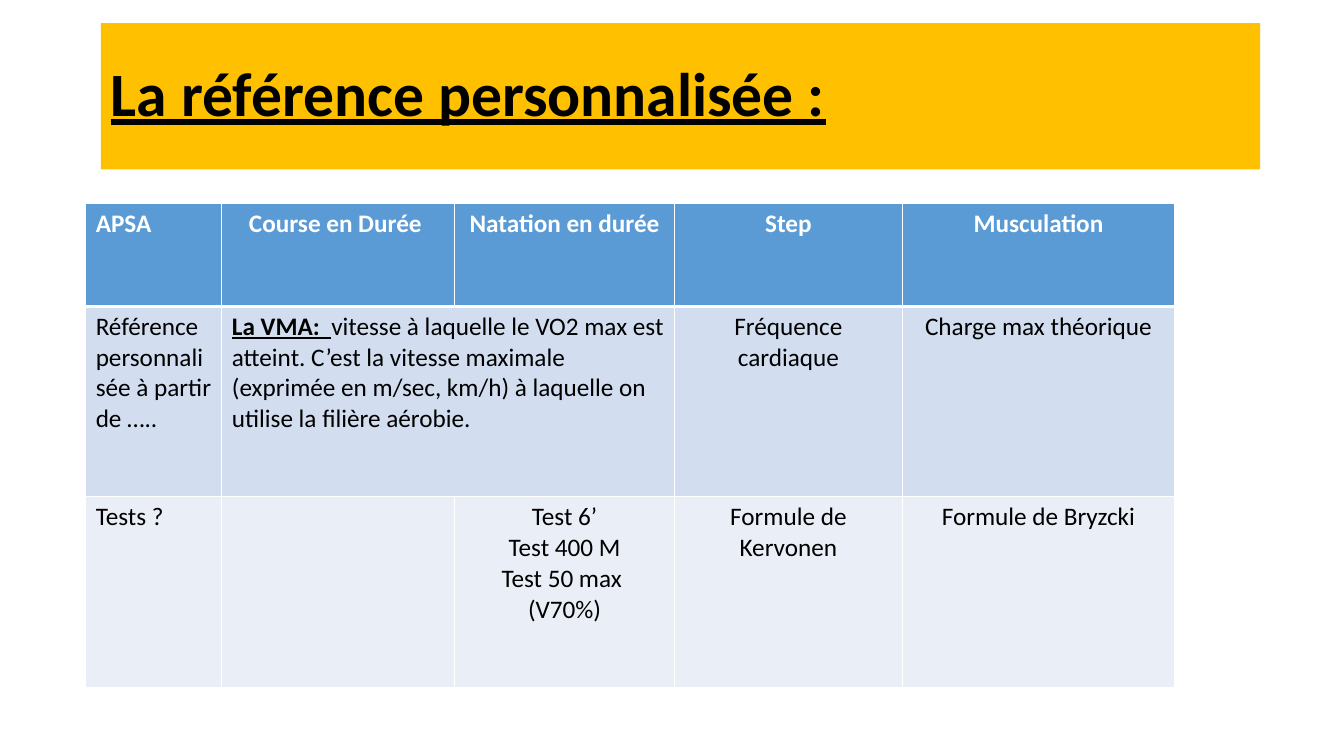
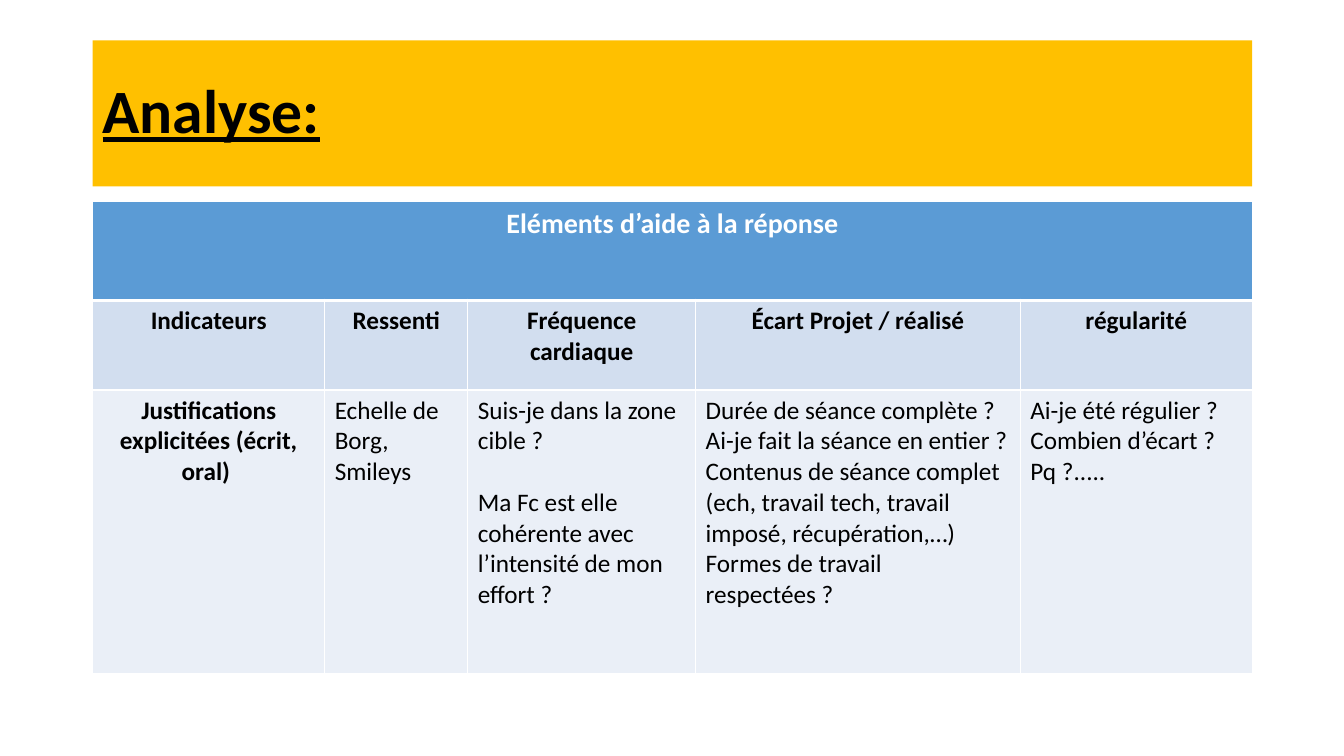
from dataclasses import dataclass

from lxml.etree import SubElement
from pptx import Presentation
from pptx.dml.color import RGBColor
from pptx.enum.shapes import MSO_SHAPE
from pptx.enum.text import MSO_ANCHOR, PP_ALIGN
from pptx.oxml.ns import qn
from pptx.util import Inches, Pt


@dataclass(frozen=True)
class Theme:
    font: str = "Calibri"
    band: str = "FFC000"
    header: str = "5B9BD5"
    rows: tuple = ("D2DEEF", "EAEFF7")
    ink: str = "000000"
    white: str = "FFFFFF"
    title_size: int = 44
    banner_size: int = 20
    body_size: int = 18
    grid_line: float = 1
    header_line: float = 3
    question_gap: int = 22


@dataclass(frozen=True)
class Cell:
    """Text of a table cell; lead is an underlined opening, span counts columns."""
    lines: tuple = ()
    centered: bool = False
    bold: bool = False
    lead: str = ""
    span: int = 1
    size: int = Theme.body_size
    gap: int = 0


def left(*lines, **options):
    return Cell(lines, **options)


def center(*lines, **options):
    return Cell(lines, centered=True, **options)


def heading(text, **options):
    return center(text, bold=True, **options)


# Content: one entry per slide; a row starts at its first column
SLIDES = [
    {
        "title": "La référence personnalisée :",
        "title_at": (1, 0.23),
        "table_at": (0.85, 2.02),
        "columns": (1.35, 2.31, 2.18, 2.26, 2.7),
        "heights": (1.02, 1.89, 1.89),
        "rows": [
            [left("APSA", bold=True), heading("Course en Durée "),
             heading("Natation en durée"), heading("Step"), heading("Musculation")],
            [left("Référence personnalisée à partir de ….."),
             left("vitesse à laquelle le VO2 max est atteint. C’est la vitesse "
                  "maximale (exprimée en m/sec, km/h) à laquelle on utilise la "
                  "filière aérobie.", lead="La VMA:  ", span=2),
             center("Fréquence cardiaque"), center("Charge max théorique")],
            [left("Tests ?"), left(),
             center("Test 6’", "Test 400 M", "Test 50 max  (V70%)"),
             center("Formule de Kervonen"), center("Formule de Bryzcki")],
        ],
    },
    {
        "title": "Analyse:",
        "title_at": (0.92, 0.4),
        "table_at": (0.92, 2),
        "columns": (2.3, 1.42, 2.26, 3.22, 2.3),
        "heights": (0.98, 0.89, 2.81),
        "rows": [
            [heading("Eléments d’aide à la réponse", span=5, size=Theme.banner_size)],
            [heading("Indicateurs"), heading("Ressenti"), heading("Fréquence cardiaque"),
             heading("Écart Projet / réalisé"), heading("régularité")],
            [heading("Justifications explicitées (écrit, oral) "),
             left("Echelle de Borg,", "Smileys"),
             left("Suis-je dans la zone cible ?",
                  "Ma Fc est elle cohérente avec l’intensité de mon effort ?",
                  gap=Theme.question_gap),
             left("Durée de séance complète ?", "Ai-je fait la séance en entier ?",
                  "Contenus de séance complet (ech, travail tech, travail imposé, "
                  "récupération,…)", "Formes de travail respectées ?"),
             left("Ai-je été régulier ?", "Combien d’écart ? Pq ?.....")],
        ],
    },
]


def paint(target, color):
    target.fill.solid()
    target.fill.fore_color.rgb = RGBColor.from_string(color)


def add_span(para, text, size, color, bold=False, underline=False):
    span = para.add_run()
    span.text = text
    font = span.font
    font.name, font.size = Theme.font, Pt(size)
    font.bold, font.underline = bold, underline
    font.color.rgb = RGBColor.from_string(color)


def add_title(page, text, position):
    x, y = position
    box = page.shapes.add_shape(MSO_SHAPE.RECTANGLE, Inches(x), Inches(y),
                                Inches(11.5), Inches(1.45))
    box.shadow.inherit = False
    paint(box, Theme.band)
    box.line.fill.background()
    box.text_frame.word_wrap = True
    box.text_frame.vertical_anchor = MSO_ANCHOR.MIDDLE
    para = box.text_frame.paragraphs[0]
    para.alignment = PP_ALIGN.LEFT
    para.line_spacing = 0.9
    add_span(para, text, Theme.title_size, Theme.ink, bold=True, underline=True)


def set_borders(cell, top, bottom):
    properties = cell._tc.get_or_add_tcPr()
    widths = {"a:lnL": Theme.grid_line, "a:lnR": Theme.grid_line,
              "a:lnT": top, "a:lnB": bottom}
    for place, (tag, width) in enumerate(widths.items()):
        line = SubElement(properties, qn(tag), w=str(Pt(width)))
        fill = SubElement(line, qn("a:solidFill"))
        SubElement(fill, qn("a:srgbClr"), val=Theme.white)
        properties.insert(place, line)  # borders come before the fill


def write_cell(cell, content, color):
    frame = cell.text_frame
    for number, text in enumerate(content.lines):
        para = frame.add_paragraph() if number else frame.paragraphs[0]
        para.alignment = PP_ALIGN.CENTER if content.centered else PP_ALIGN.LEFT
        if number and content.gap:
            para.space_before = Pt(content.gap)
        if content.lead and not number:
            add_span(para, content.lead, content.size, color, bold=True, underline=True)
        add_span(para, text, content.size, color, bold=content.bold)


def add_grid(page, position, columns, heights, rows):
    x, y = position
    table = page.shapes.add_table(len(heights), len(columns), Inches(x), Inches(y),
                                  Inches(sum(columns)), Inches(sum(heights))).table
    for column, width in zip(table.columns, columns):
        column.width = Inches(width)
    for index, (row, height, contents) in enumerate(zip(table.rows, heights, rows)):
        row.height = Inches(height)
        is_header = index == 0
        color = Theme.white if is_header else Theme.ink
        top = Theme.header_line if index == 1 else Theme.grid_line
        bottom = Theme.header_line if is_header else Theme.grid_line
        for cell in row.cells:
            paint(cell, Theme.header if is_header else Theme.rows[(index - 1) % 2])
            set_borders(cell, top, bottom)
        start = 0
        for content in contents:
            cell = table.cell(index, start)
            if content.span > 1:
                cell.merge(table.cell(index, start + content.span - 1))
            write_cell(cell, content, color)
            start += content.span


def main():
    deck = Presentation()
    deck.slide_width, deck.slide_height = Inches(13.33), Inches(7.5)
    for content in SLIDES:
        page = deck.slides.add_slide(deck.slide_layouts[6])
        add_title(page, content["title"], content["title_at"])
        add_grid(page, content["table_at"], content["columns"],
                 content["heights"], content["rows"])
    deck.save("out.pptx")


if __name__ == "__main__":
    main()
